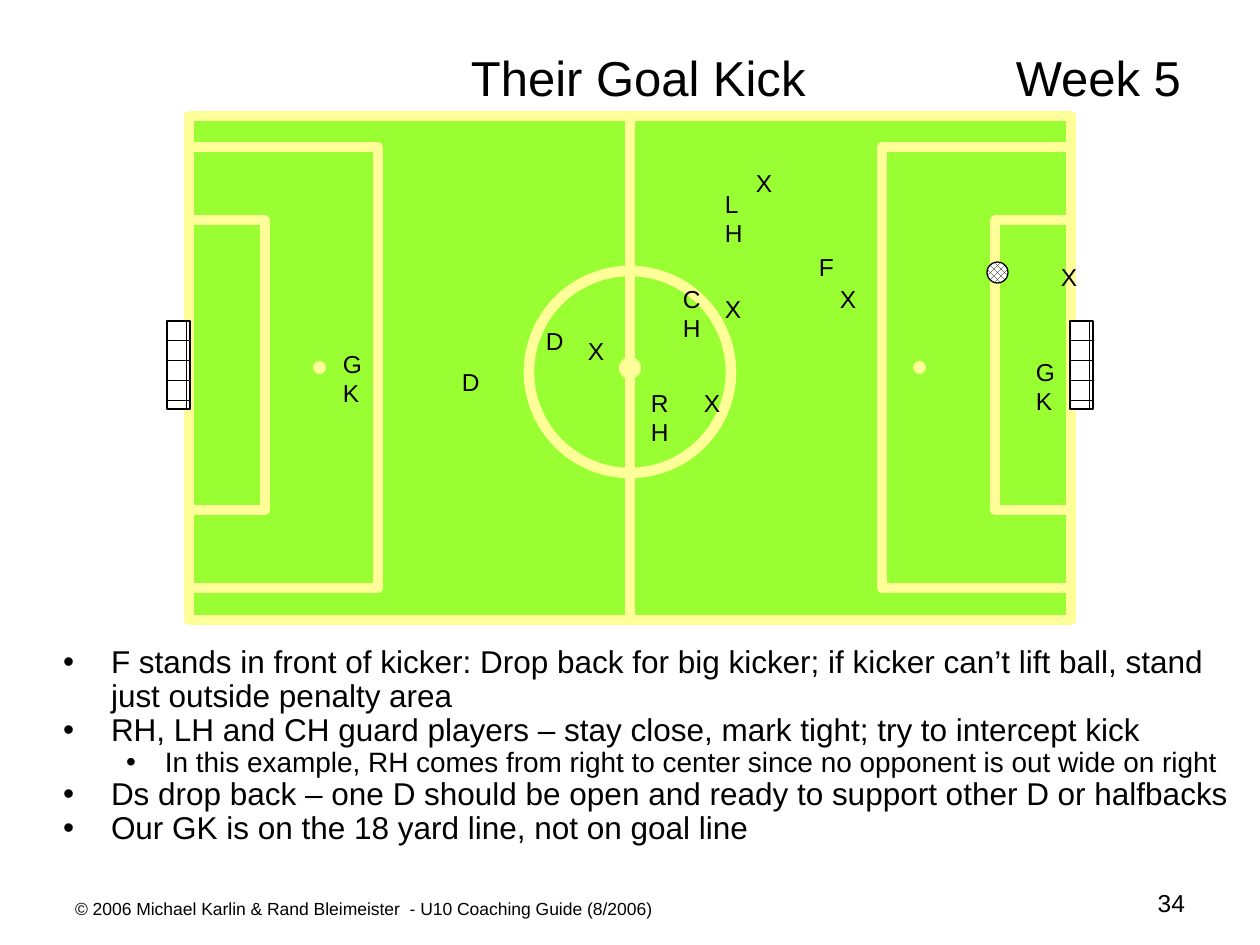
"""Build the soccer coaching slide on defending the opponent's goal kick."""
from dataclasses import dataclass

from lxml.etree import SubElement
from pptx import Presentation
from pptx.dml.color import RGBColor
from pptx.enum.dml import MSO_PATTERN
from pptx.enum.shapes import MSO_CONNECTOR, MSO_SHAPE
from pptx.enum.text import MSO_ANCHOR, PP_ALIGN
from pptx.oxml.ns import qn
from pptx.util import Emu, Pt


@dataclass(frozen=True)
class Theme:
    font: str = "Arial"
    ink: RGBColor = RGBColor(0, 0, 0)
    paper: RGBColor = RGBColor(255, 255, 255)
    grass: RGBColor = RGBColor(0x99, 0xFF, 0x33)
    chalk: RGBColor = RGBColor(0xFF, 0xFF, 0x99)
    title: int = 28
    bullets: tuple = (18, 16)
    label: int = 14
    footer: int = 10
    chalk_line: float = 6
    thin_line: float = 0.75


THEME = Theme()
SCALE = 914400 / 126
PAGE_WIDTH, PAGE_HEIGHT = 1260, 945

TITLE = "\tTheir Goal Kick\tWeek 5"
TITLE_TABS = (396, 941)
FOOTER = "© 2006 Michael Karlin & Rand Bleimeister  - U10 Coaching Guide (8/2006)"
PAGE_NUMBER = "34"
BULLETS = [
    (0, "F stands in front of kicker: Drop back for big kicker; if kicker can’t lift ball, "
        "stand just outside penalty area"),
    (0, "RH, LH and CH guard players – stay close, mark tight; try to intercept kick"),
    (1, "In this example, RH comes from right to center since no opponent is out wide on right"),
    (0, "Ds drop back – one D should be open and ready to support other D or halfbacks"),
    (0, "Our GK is on the 18 yard line, not on goal line"),
]
BULLET_INDENTS = ((48, 48), (102, 39))

PITCH = (189, 116, 882, 504)
PENALTY_AREA = (189, 147, 189, 441)
GOAL_AREA = (189, 220, 76, 290)
CENTER_CIRCLE = (529, 271, 202, 202)
SPOTS = [(313, 361, 13, 13), (913, 361, 13, 13), (619, 357, 22, 22)]
BALL = (987, 262, 21, 21)
GOAL = (167, 321, 23, 88)
LABEL_WIDTH, LABEL_HEIGHT = 28, 29
PLAYERS = [
    ("X", 840, 284), ("X", 1061, 262), ("X", 756, 168), ("X", 725, 294),
    ("X", 588, 336), ("X", 704, 388), ("D", 462, 367), ("D", 546, 326),
    ("CH", 683, 284), ("LH", 725, 189), ("RH", 651, 388), ("F", 819, 252),
    ("GK", 1036, 357), ("GK", 343, 349),
]


def px(length):
    return Emu(round(length * SCALE))


def mirrored(area):
    left, top, width, height = area
    return PAGE_WIDTH - left - width, top, width, height


def add_figure(page, kind, area, fill, line=None, width=0, pattern=None):
    shape = page.shapes.add_shape(kind, *map(px, area))
    shape.shadow.inherit = False
    if pattern is None:
        shape.fill.solid()
        shape.fill.fore_color.rgb = fill
    else:
        shape.fill.patterned()
        shape.fill.pattern = pattern
        shape.fill.fore_color.rgb = THEME.ink
        shape.fill.back_color.rgb = fill
    if line is None:
        shape.line.fill.background()
    else:
        shape.line.color.rgb = line
        shape.line.width = Pt(width)
    return shape


def add_box(page, area, insets=(12, 6)):
    frame = page.shapes.add_textbox(*map(px, area)).text_frame
    frame.word_wrap = True
    frame.margin_left = frame.margin_right = px(insets[0])
    frame.margin_top = frame.margin_bottom = px(insets[1])
    return frame


def write(para, text, size, align=PP_ALIGN.LEFT):
    para.text = text
    para.alignment = align
    para.font.name = THEME.font
    para.font.size = Pt(size)
    para.font.color.rgb = THEME.ink


def add_title(page):
    frame = add_box(page, (63, 38, 1134, 78))
    frame.vertical_anchor = MSO_ANCHOR.MIDDLE
    para = frame.paragraphs[0]
    tabs = SubElement(para._p.get_or_add_pPr(), qn("a:tabLst"))
    for position in TITLE_TABS:
        SubElement(tabs, qn("a:tab"), pos=str(px(position)), algn="l")
    write(para, TITLE, THEME.title)


def add_pitch(page):
    chalk = (THEME.grass, THEME.chalk, THEME.chalk_line)
    pitch = add_figure(page, MSO_SHAPE.RECTANGLE, PITCH, *chalk)
    for area in (PENALTY_AREA, GOAL_AREA):
        for side in (area, mirrored(area)):
            add_figure(page, MSO_SHAPE.RECTANGLE, side, *chalk)
    add_figure(page, MSO_SHAPE.OVAL, CENTER_CIRCLE, *chalk)
    halfway = page.shapes.add_connector(MSO_CONNECTOR.STRAIGHT, 0, 0, 0, 0)
    halfway.begin_connect(pitch, 0)
    halfway.end_connect(pitch, 2)
    halfway.line.color.rgb = THEME.chalk
    halfway.line.width = Pt(THEME.chalk_line)
    SubElement(halfway._element.spPr, qn("a:effectLst"))
    for spot in SPOTS:
        add_figure(page, MSO_SHAPE.OVAL, spot, THEME.chalk)


def add_players(page):
    for name, left, top in PLAYERS:
        frame = add_box(page, (left, top, LABEL_WIDTH, LABEL_HEIGHT), (0, 0))
        write(frame.paragraphs[0], name, THEME.label)
    outline = (THEME.paper, THEME.ink, THEME.thin_line)
    add_figure(page, MSO_SHAPE.OVAL, BALL, *outline, MSO_PATTERN.LARGE_CHECKER_BOARD)
    for goal in (GOAL, mirrored(GOAL)):
        add_figure(page, MSO_SHAPE.RECTANGLE, goal, *outline, MSO_PATTERN.DOTTED_GRID)


def add_bullets(page):
    frame = add_box(page, (63, 640, 1166, 252), (0, 6))
    for index, (level, text) in enumerate(BULLETS):
        para = frame.add_paragraph() if index else frame.paragraphs[0]
        margin, hanging = BULLET_INDENTS[level]
        para.level = level
        properties = para._p.get_or_add_pPr()
        properties.set("marL", str(px(margin)))
        properties.set("indent", str(px(-hanging)))
        SubElement(properties, qn("a:buFont"), typeface=THEME.font)
        SubElement(properties, qn("a:buChar"), char="•")
        para.line_spacing = 0.9
        write(para, text, THEME.bullets[level])


def main():
    deck = Presentation()
    deck.slide_width, deck.slide_height = px(PAGE_WIDTH), px(PAGE_HEIGHT)
    page = deck.slides.add_slide(deck.slide_layouts[6])
    footer = add_box(page, (63, 892, 672, 34))
    write(footer.paragraphs[0], FOOTER, THEME.footer)
    number = add_box(page, (903, 882, 294, 44))
    write(number.paragraphs[0], PAGE_NUMBER, THEME.label, PP_ALIGN.RIGHT)
    add_title(page)
    add_pitch(page)
    add_players(page)
    add_bullets(page)
    deck.save("out.pptx")


if __name__ == "__main__":
    main()
